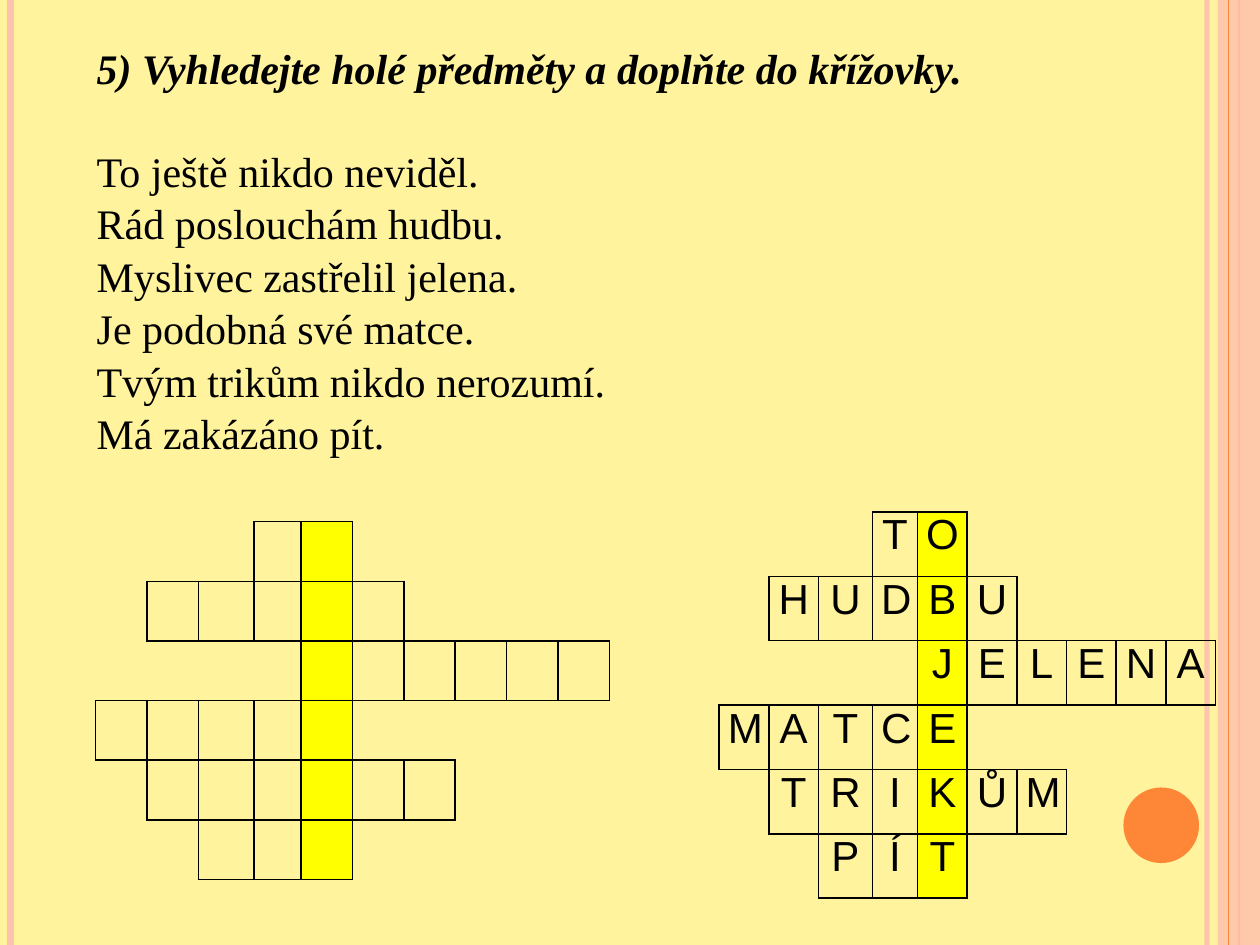
"""Builds a Czech grammar slide with an empty crossword and its solution."""
from lxml.etree import SubElement
from pptx import Presentation
from pptx.dml.color import RGBColor
from pptx.enum.shapes import MSO_CONNECTOR, MSO_SHAPE
from pptx.enum.text import MSO_ANCHOR, PP_ALIGN
from pptx.oxml.ns import qn
from pptx.util import Pt

CREAM = RGBColor(0xFF, 0xF3, 0x9D)
PEACH = RGBColor(0xFE, 0xC3, 0xAE)
ORANGE = RGBColor(0xFE, 0x86, 0x37)
YELLOW = RGBColor(0xFF, 0xFF, 0x00)
BLACK = RGBColor(0, 0, 0)

WIDTH, HEIGHT = 720, 540
COLUMNS, KEY_COLUMN = 11, 5
WORDS = [("TO", 4), ("HUDBU", 2), ("JELENA", 5),
         ("MATCE", 1), ("TRIKŮM", 2), ("PÍT", 3)]
LETTERS = {(row, start + i): letter
           for row, (word, start) in enumerate(WORDS)
           for i, letter in enumerate(word)}
SIDES = {"lnL": (0, -1), "lnR": (0, 1), "lnT": (-1, 0), "lnB": (1, 0)}

TITLE = "5) Vyhledejte holé předměty a doplňte do křížovky."
SENTENCES = ["To ještě nikdo neviděl.", "Rád poslouchám hudbu.",
             "Myslivec zastřelil jelena.", "Je podobná své matce.",
             "Tvým trikům nikdo nerozumí.", "Má zakázáno pít."]


def set_alpha(fill, percent):
    """Make a solid fill partly transparent."""
    color = fill._xPr.find(qn("a:solidFill"))[0]
    SubElement(color, qn("a:alpha"), val=str(percent * 1000))


def add_stripe(s, x, color, width, alpha=100):
    """Draw a vertical line over the full slide height."""
    line = s.shapes.add_connector(
        MSO_CONNECTOR.STRAIGHT, Pt(x), Pt(0), Pt(x), Pt(HEIGHT))
    line.line.color.rgb = color
    line.line.width = Pt(width)
    if alpha < 100:
        set_alpha(line.line.fill, alpha)
    SubElement(line._element.spPr, qn("a:effectLst"))


def add_shape(s, kind, x, y, w, h, color, alpha=100):
    """Draw a filled shape without outline."""
    sp = s.shapes.add_shape(kind, Pt(x), Pt(y), Pt(w), Pt(h))
    sp.shadow.inherit = False
    sp.fill.solid()
    sp.fill.fore_color.rgb = color
    sp.line.fill.background()
    if alpha < 100:
        set_alpha(sp.fill, alpha)


def write(p, text, font="Times New Roman", size=24, bold=False, italic=False,
          align=PP_ALIGN.LEFT, spacing=None, before=0):
    """Put formatted text in a paragraph."""
    p.alignment = align
    p.space_before = Pt(before)
    if spacing:
        p.line_spacing = spacing
    r = p.add_run()
    r.text = text
    r.font.name, r.font.size = font, Pt(size)
    r.font.bold, r.font.italic = bold, italic
    r.font.color.rgb = BLACK


def add_exercise(s):
    """Add the task and its sentences."""
    box = s.shapes.add_textbox(Pt(48.2), Pt(22.3), Pt(566.6), Pt(269.3))
    tf = box.text_frame
    tf.word_wrap = True
    tf.vertical_anchor = MSO_ANCHOR.MIDDLE
    tf.margin_bottom = Pt(32.4)
    write(tf.paragraphs[0], TITLE, bold=True, italic=True, spacing=1.04)
    for i, sentence in enumerate(SENTENCES):
        write(tf.add_paragraph(), sentence, spacing=1.04,
              before=0 if i else 28.8)


def set_borders(cell, row, col):
    """Rule every side of a cell that touches a letter square."""
    tc_pr = cell._tc.get_or_add_tcPr()
    for tag, (d_row, d_col) in SIDES.items():
        ln = SubElement(tc_pr, qn(f"a:{tag}"), w=str(Pt(1)))
        if (row, col) in LETTERS or (row + d_row, col + d_col) in LETTERS:
            fill = SubElement(ln, qn("a:solidFill"))
            SubElement(fill, qn("a:srgbClr"), val=str(BLACK))
        else:
            SubElement(ln, qn("a:noFill"))


def add_crossword(s, x, y, widths, row_height, solved=False):
    """Add the crossword table, with its letters if solved."""
    frame = s.shapes.add_table(len(WORDS), COLUMNS, Pt(x), Pt(y),
                               Pt(sum(widths)), Pt(row_height * len(WORDS)))
    table = frame.table
    table.first_row = table.horz_banding = False
    for column, width in zip(table.columns, widths):
        column.width = Pt(width)
    for row, table_row in enumerate(table.rows):
        table_row.height = Pt(row_height)
        for col, cell in enumerate(table_row.cells):
            cell.margin_left = cell.margin_right = Pt(5)
            cell.margin_top = cell.margin_bottom = 0
            set_borders(cell, row, col)
            if col == KEY_COLUMN:
                cell.fill.solid()
                cell.fill.fore_color.rgb = YELLOW
            else:
                cell.fill.background()
            if solved and (row, col) in LETTERS:
                write(cell.text_frame.paragraphs[0], LETTERS[row, col],
                      font="Arial", align=PP_ALIGN.CENTER)


def add_decoration(s):
    """Add the side stripes and the dot."""
    add_stripe(s, 689.8, PEACH, 3, alpha=93)
    add_stripe(s, 6, PEACH, 4.5)
    add_stripe(s, 708, ORANGE, 1.5)
    add_shape(s, MSO_SHAPE.RECTANGLE, 696, 0, 24, HEIGHT, PEACH, alpha=87)
    add_stripe(s, 702, ORANGE, 0.75)
    add_shape(s, MSO_SHAPE.OVAL, 642, 450, 43.2, 43.2, ORANGE)


def main():
    """Build and save the slide."""
    prs = Presentation()
    prs.slide_width, prs.slide_height = Pt(WIDTH), Pt(HEIGHT)
    s = prs.slides.add_slide(prs.slide_layouts[6])
    s.background.fill.solid()
    s.background.fill.fore_color.rgb = CREAM
    add_decoration(s)
    add_crossword(s, 25.2, 298.1, [29.4] * 3 + [31.7, 26.9] + [29.4] * 6, 34.1)
    add_exercise(s)
    add_crossword(s, 382.6, 292.5, [28.4] * 3 + [30.8, 25.8] + [28.4] * 6,
                  36.8, solved=True)
    prs.save("out.pptx")


if __name__ == "__main__":
    main()
